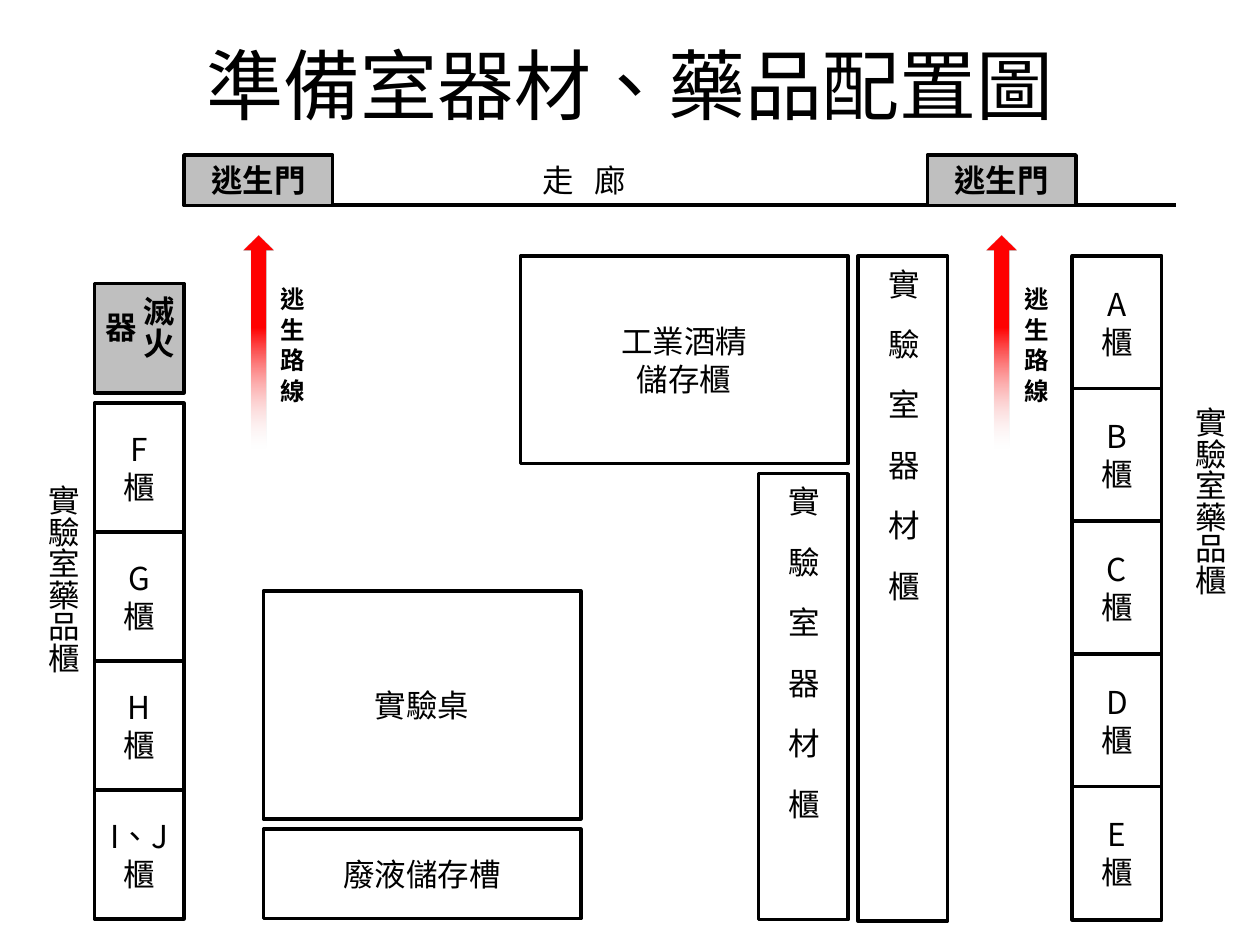
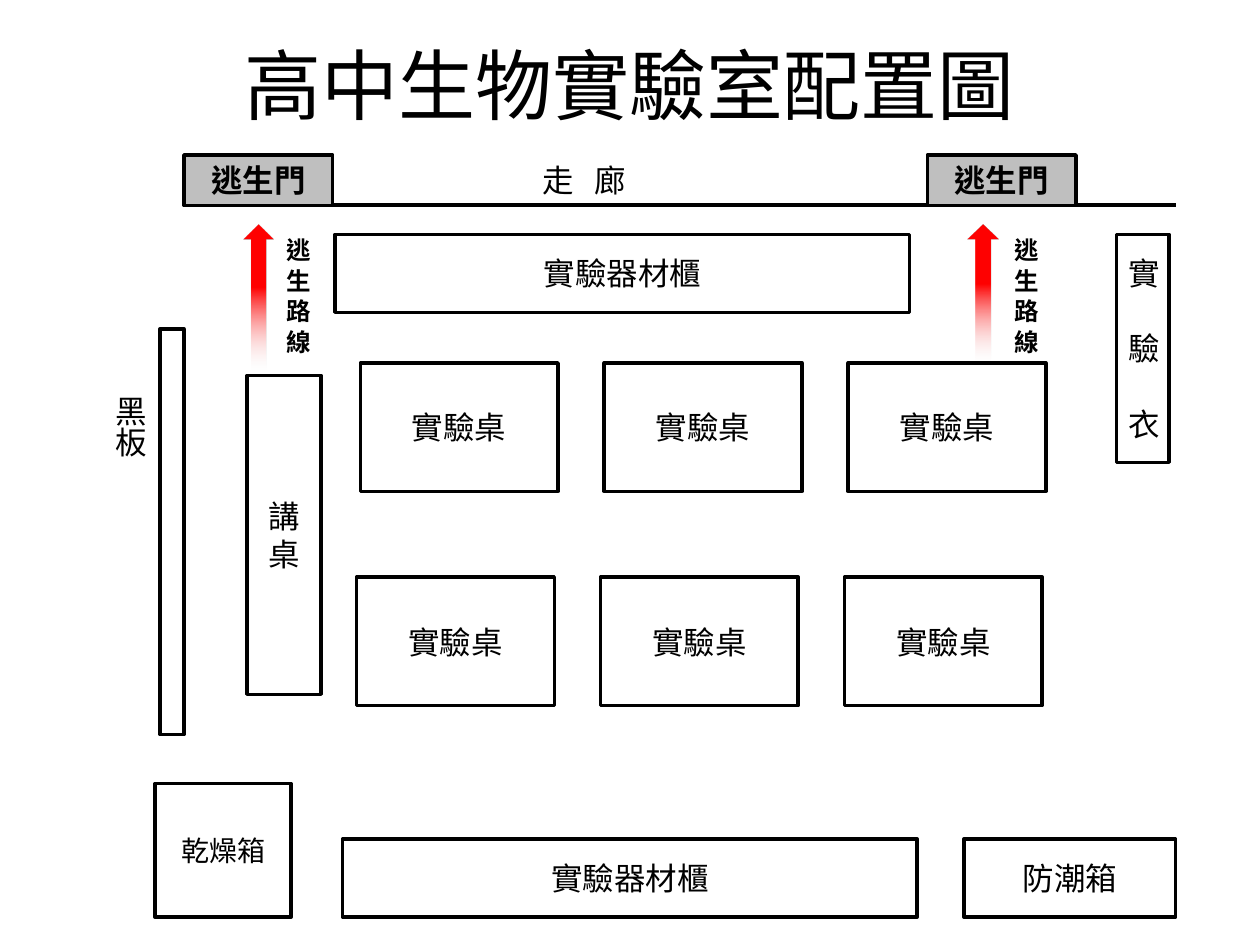
from lxml.etree import SubElement
from pptx import Presentation
from pptx.dml.color import RGBColor
from pptx.enum.lang import MSO_LANGUAGE_ID
from pptx.enum.shapes import MSO_CONNECTOR, MSO_SHAPE
from pptx.enum.text import MSO_ANCHOR, MSO_AUTO_SIZE, PP_ALIGN
from pptx.oxml import parse_xml
from pptx.oxml.ns import nsdecls, qn
from pptx.util import Pt

BLACK, WHITE, GREY = "000000", "FFFFFF", "BFBFBF"
FONT = "Noto Sans CJK SC"
# Escape arrow fade: position in percent, colour, opacity in percent
FADE = [(33, "FF0000", 100), (77, "F6E1E1", 0), (100, "EEC2C1", 0)]


def color(hex_string):
    return RGBColor.from_string(hex_string)


class FloorPlan:
    """Holds the drawing style and the current slide."""

    def __init__(self):
        self.deck = Presentation()
        self.deck.slide_width, self.deck.slide_height = Pt(720), Pt(540)
        self.slide = None

    def new_slide(self, heading):
        self.slide = self.deck.slides.add_slide(self.deck.slide_layouts[0])
        subtitle = self.slide.placeholders[1].element
        subtitle.getparent().remove(subtitle)
        title = self.slide.shapes.title
        title.left, title.top, title.width, title.height = map(Pt, (54, -10, 612, 116))
        title.text_frame.vertical_anchor = MSO_ANCHOR.MIDDLE
        self.set_text(title.text_frame, [heading], 44)

    def set_text(self, frame, lines, size=18, bold=False, align=PP_ALIGN.CENTER,
                 vertical=False, tracking=0, gap=0):
        """Fill a frame; tracking spreads characters, gap spreads lines."""
        if vertical:
            frame._txBody.bodyPr.set("vert", "eaVert")
        for number, line in enumerate(lines):
            paragraph = frame.add_paragraph() if number else frame.paragraphs[0]
            paragraph.alignment = align
            if number and gap:
                paragraph.space_before = Pt(gap)
            run = paragraph.add_run()
            run.text = line
            font = run.font
            font.name, font.size, font.bold = FONT, Pt(size), bold
            font.color.rgb = color(BLACK)
            font.language_id = MSO_LANGUAGE_ID.TRADITIONAL_CHINESE
            properties = run._r.get_or_add_rPr()
            SubElement(properties, qn("a:ea"), typeface=FONT)
            if tracking:
                properties.set("spc", str(round(tracking * 100)))

    def box(self, left, top, width, height, *lines, fill=WHITE, **text_style):
        shape = self.slide.shapes.add_shape(
            MSO_SHAPE.RECTANGLE, Pt(left), Pt(top), Pt(width), Pt(height))
        shape.shadow.inherit = False
        shape.fill.solid()
        shape.fill.fore_color.rgb = color(fill)
        shape.line.color.rgb = color(BLACK)
        shape.line.width = Pt(2)
        self.set_text(shape.text_frame, lines, **text_style)

    def label(self, left, top, width, height, text, wrap=False, **text_style):
        frame = self.slide.shapes.add_textbox(
            Pt(left), Pt(top), Pt(width), Pt(height)).text_frame
        frame.word_wrap = wrap
        frame.auto_size = MSO_AUTO_SIZE.SHAPE_TO_FIT_TEXT
        self.set_text(frame, [text], **text_style)

    def side_label(self, left, top, height, text):
        self.label(left, top, 36, height, text, wrap=True, vertical=True,
                   align=PP_ALIGN.JUSTIFY)

    def wall(self, start, end, y):
        wall = self.slide.shapes.add_connector(
            MSO_CONNECTOR.STRAIGHT, Pt(start), Pt(y), Pt(end), Pt(y))
        wall.line.color.rgb = color(BLACK)
        wall.line.width = Pt(2.25)
        SubElement(wall._element.spPr, qn("a:effectLst"))

    def escape_route(self, left, top, length, label_left, label_top):
        arrow = self.slide.shapes.add_shape(
            MSO_SHAPE.UP_ARROW, Pt(left), Pt(top), Pt(17.3), Pt(length))
        arrow.shadow.inherit = False
        arrow.line.fill.background()
        arrow.fill.background()
        stops = "".join(
            f'<a:gs pos="{position * 1000}"><a:srgbClr val="{tint}">'
            f'<a:alpha val="{opacity * 1000}"/></a:srgbClr></a:gs>'
            for position, tint, opacity in FADE)
        properties = arrow._element.spPr
        properties.replace(properties.find(qn("a:noFill")), parse_xml(
            f'<a:gradFill {nsdecls("a")} rotWithShape="1"><a:gsLst>{stops}</a:gsLst>'
            '<a:lin ang="5400000" scaled="0"/></a:gradFill>'))
        self.label(label_left, label_top, 31.7, 74.2, "逃 生 路 線", size=14,
                   bold=True, vertical=True, align=PP_ALIGN.LEFT)

    def corridor(self):
        for start, end in ((167, 535.7), (604.1, 671.8)):
            self.wall(start, end, 117.4)
        for door_left in (529.9, 105.1):
            self.box(door_left, 88.6, 85, 28.8, "逃生門", fill=GREY, bold=True)
        self.label(303.1, 88.6, 64.8, 28.8, "走 廊", tracking=3.9,
                   align=PP_ALIGN.LEFT)


def preparation_room(plan):
    plan.new_slide("準備室器材、藥品配置圖")

    # Chemical cabinets along both walls
    for number, letter in enumerate("ABCDE"):
        plan.box(612.7, 146.2 + 75.8 * number, 51.1, 76.3, letter, "櫃")
    for number, lines in enumerate((["F", "櫃"], ["G", "櫃"], ["H", "櫃"], ["I、J櫃"])):
        plan.box(54, 230.4 + 73.7 * number, 51.1, 73.7, *lines)
    for left, top in ((669.6, 225.4), (14.4, 270)):
        plan.side_label(left, top, 209.5, "實驗室藥品櫃")
    plan.box(54, 162, 51.1, 62.6, "滅火器", fill=GREY, bold=True, vertical=True)

    # Equipment cabinets, alcohol store, desk and waste tank
    for left, top, height in ((490.3, 146.2, 380.2), (433.4, 270.7, 254.9)):
        plan.box(left, top, 51.1, height, "實 驗 室 器 材 櫃", vertical=True, tracking=6.2)
    plan.box(297.4, 146.2, 187.2, 118.8, "工業酒精", "儲存櫃")
    plan.box(150.5, 337.7, 181.4, 130.3, "實驗桌")
    plan.box(150.5, 473.8, 181.4, 51.1, "廢液儲存槽")

    # Corridor and escape routes
    plan.corridor()
    for left, label_left in ((139, 146.9), (563.8, 572.4)):
        plan.escape_route(left, 134.6, 158.4, label_left, 157)


def biology_lab(plan):
    plan.new_slide("高中生物實驗室配置圖")

    # Blackboard, lectern and lab coats
    plan.box(91.4, 187.9, 13.7, 231.8)
    plan.side_label(52.6, 218.9, 152.6, "黑板")
    plan.box(141.1, 214.6, 42.5, 182.2, "講桌")
    plan.box(637.9, 133.9, 30.2, 130.3, "實", "驗", "衣", gap=21.6)

    # Corridor and escape routes
    plan.corridor()
    for left, length, label_left in ((139, 108, 150.5), (553, 102.2, 566.6)):
        plan.escape_route(left, 128.2, length, label_left, 128.9)

    # Two rows of lab desks
    for row_left, row_top in ((205.9, 207.4), (203.8, 329.8)):
        for column in range(3):
            plan.box(row_left + 139.4 * column, row_top, 113, 73.4, "實驗桌")

    # Storage
    for left, top in ((195.8, 479.5), (191.5, 133.9)):
        plan.box(left, top, 328.3, 44.6, "實驗器材櫃")
    plan.box(88.6, 447.8, 77.8, 76.3, "乾燥箱", size=16)
    plan.box(550.8, 479.5, 121, 44.6, "防潮箱")


def main():
    plan = FloorPlan()
    preparation_room(plan)
    biology_lab(plan)
    plan.deck.save("out.pptx")


if __name__ == "__main__":
    main()
